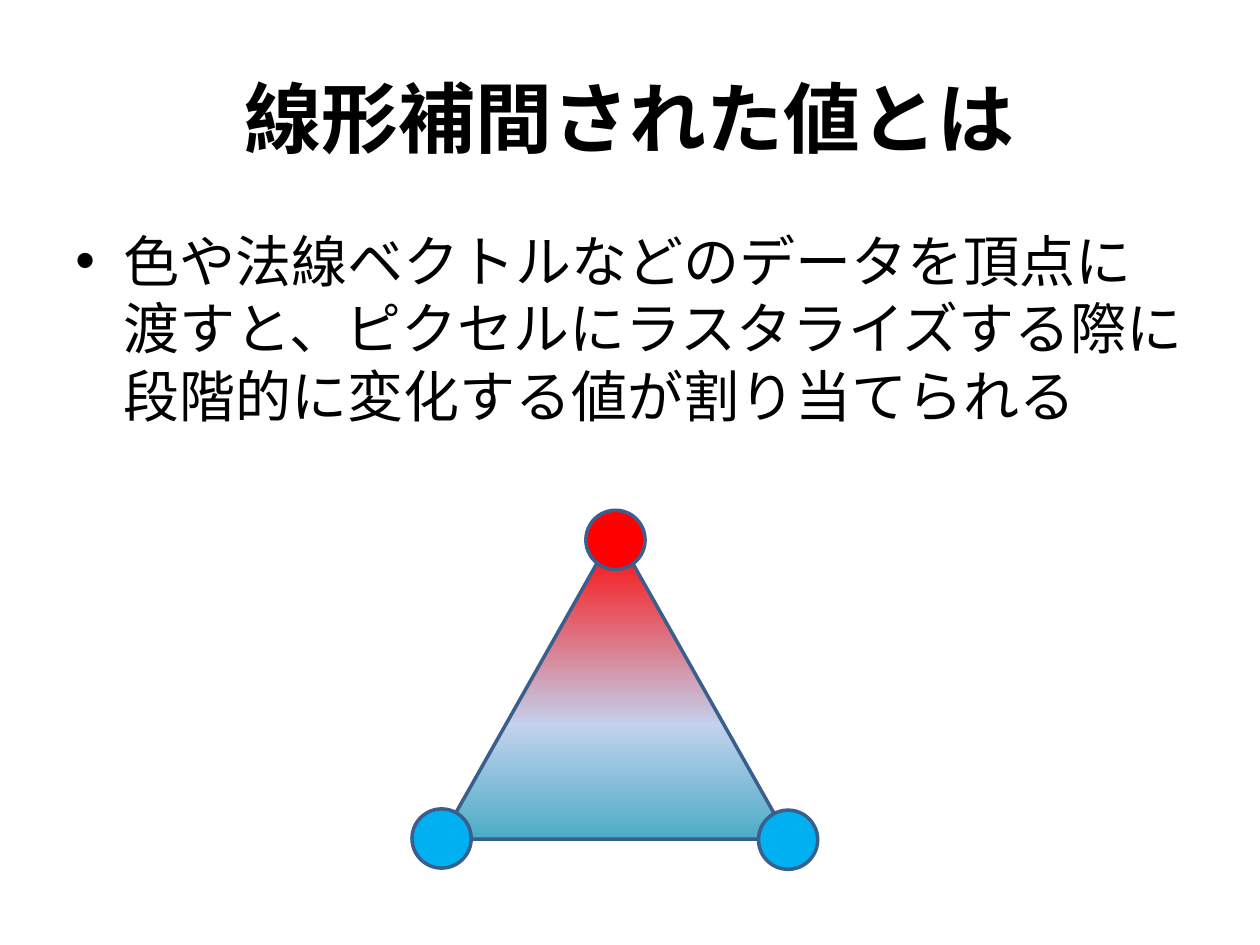
from copy import deepcopy

from lxml import etree
from pptx import Presentation
from pptx.dml.color import RGBColor
from pptx.enum import shapes as sh, text as tx
from pptx.oxml.ns import qn
from pptx.util import Inches, Pt

FONT = "Noto Sans CJK JP"
BLACK = RGBColor(0, 0, 0)
RED = RGBColor(0xFF, 0, 0)
PALE = RGBColor(0xC2, 0xD1, 0xED)
TEAL = RGBColor(0x4B, 0xAC, 0xC6)
BLUE = RGBColor(0, 0xB0, 0xF0)
EDGE = RGBColor(0x3A, 0x5F, 0x8C)

deck = Presentation()
deck.slide_width, deck.slide_height = Inches(10), Inches(7.5)
slide = deck.slides.add_slide(deck.slide_layouts[6])


def add_text(words, top, height, size, bold, anchor):
    """Add a full-width text box and return its paragraph."""
    box = slide.shapes.add_textbox(Inches(0.5), Inches(top), Inches(9), Inches(height))
    frame = box.text_frame
    frame.word_wrap = True
    frame.vertical_anchor = anchor
    para = frame.paragraphs[0]
    run = para.add_run()
    run.text = words
    font = run.font
    font.name, font.size, font.bold = FONT, Pt(size), bold
    font.color.rgb = BLACK
    etree.SubElement(font._element, qn("a:ea"), typeface=FONT)
    return para


def add_form(kind, left, top, width, height):
    form = slide.shapes.add_shape(
        kind, Inches(left), Inches(top), Inches(width), Inches(height))
    form.shadow.inherit = False
    form.line.color.rgb = EDGE
    form.line.width = Pt(2)
    return form


# Triangle shaded from top to bottom
face = add_form(sh.MSO_SHAPE.ISOSCELES_TRIANGLE, 3.5, 4.22, 2.76, 2.44)
face.fill.gradient()
face.fill.gradient_angle = 270
stops = face._element.spPr.find(qn("a:gradFill")).find(qn("a:gsLst"))
stops.append(deepcopy(stops[-1]))
shades = [(0, RED), (0.63, PALE), (1, TEAL)]
for stop, (place, color) in zip(face.fill.gradient_stops, shades):
    stop.position = place
    stop.color.rgb = color

# Title and bullet
title = add_text("線形補間された値とは", 0.3, 1.25, 44, True, tx.MSO_ANCHOR.MIDDLE)
title.alignment = tx.PP_ALIGN.CENTER

body = add_text(
    "色や法線ベクトルなどのデータを頂点に渡すと、"
    "ピクセルにラスタライズする際に段階的に変化する値が割り当てられる",
    1.75, 4.95, 32, False, tx.MSO_ANCHOR.TOP)
props = body._p.get_or_add_pPr()
props.set("marL", str(Inches(0.38)))
props.set("indent", str(Inches(-0.38)))
space = etree.SubElement(props, qn("a:spcBef"))
etree.SubElement(space, qn("a:spcPct"), val="20000")
etree.SubElement(props, qn("a:buFont"), typeface="Arial")
etree.SubElement(props, qn("a:buChar"), char="•")

# Vertices
for left, top, color in [(4.65, 4.05, RED), (3.27, 6.42, BLUE), (6.02, 6.43, BLUE)]:
    dot = add_form(sh.MSO_SHAPE.OVAL, left, top, 0.47, 0.47)
    dot.fill.solid()
    dot.fill.fore_color.rgb = color

deck.save("out.pptx")
